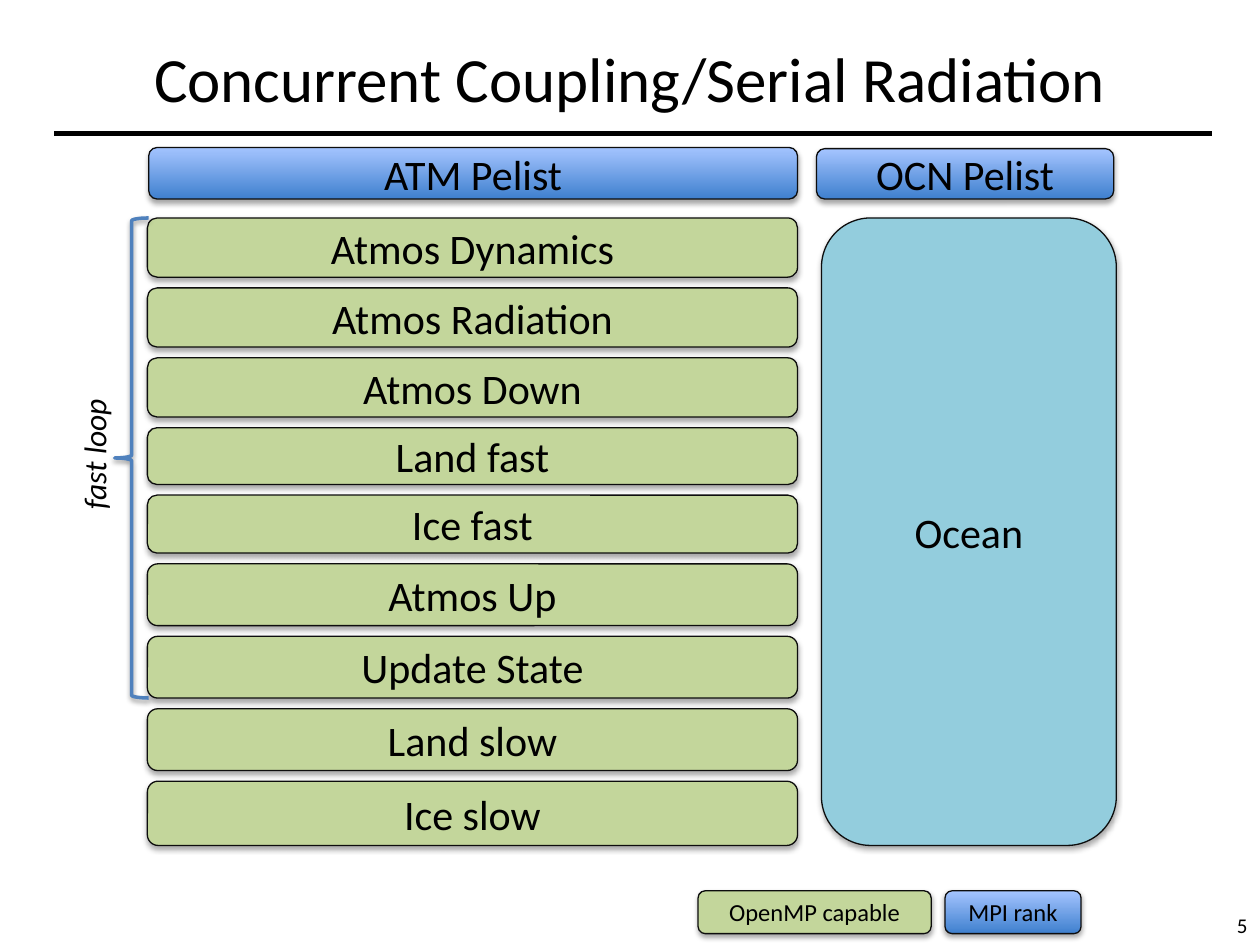
from lxml import etree
from pptx import Presentation
from pptx.dml.color import RGBColor
from pptx.enum.shapes import MSO_CONNECTOR, MSO_SHAPE
from pptx.enum.text import MSO_ANCHOR, MSO_AUTO_SIZE, PP_ALIGN
from pptx.oxml.ns import qn
from pptx.util import Inches, Pt

BLACK = RGBColor(0x00, 0x00, 0x00)
OUTLINE = RGBColor(0x0D, 0x0D, 0x0D)
GREEN = RGBColor(0xC3, 0xD6, 0x9B)
TEAL = RGBColor(0x93, 0xCD, 0xDD)
DARK_BLUE = RGBColor(0x3F, 0x80, 0xCE)
LIGHT_BLUE = RGBColor(0xA4, 0xC4, 0xFF)
BRACE_BLUE = RGBColor(0x4F, 0x81, 0xBD)


def add_text(sp, text, size, align, italic=None):
    p = sp.text_frame.paragraphs[0]
    p.alignment = align
    r = p.add_run()
    r.text = text
    r.font.name = "Calibri"
    r.font.size = Pt(size)
    r.font.italic = italic
    r.font.color.rgb = BLACK


def add_shape(kind, left, top, width, height, line, weight, opacity, distance):
    sp = s.shapes.add_shape(kind, Inches(left), Inches(top), Inches(width), Inches(height))
    sp.line.color.rgb = line
    sp.line.width = Pt(weight)
    sp.shadow.inherit = False
    effects = sp._element.spPr.find(qn("a:effectLst"))
    shadow = etree.SubElement(effects, qn("a:outerShdw"), blurRad=str(Pt(3.1)),
                              dist=str(Pt(distance)), dir="5400000", rotWithShape="0")
    color = etree.SubElement(shadow, qn("a:srgbClr"), val="000000")
    etree.SubElement(color, qn("a:alpha"), val=str(opacity * 1000))
    return sp


prs = Presentation()
prs.slide_width = Inches(10)
prs.slide_height = Inches(7.5)
s = prs.slides.add_slide(prs.slide_layouts[5])

title = s.shapes.title
title.left, title.top = Inches(0.5), Inches(0.26)
title.width, title.height = Inches(9), Inches(0.7)
title.text_frame.vertical_anchor = MSO_ANCHOR.MIDDLE
add_text(title, "Concurrent Coupling/Serial Radiation", 36, PP_ALIGN.CENTER)

rule = s.shapes.add_connector(MSO_CONNECTOR.STRAIGHT, Inches(0.43), Inches(1.06),
                              Inches(9.62), Inches(1.06))
rule.line.color.rgb = BLACK
rule.line.width = Pt(3)
etree.SubElement(rule._element.spPr, qn("a:effectLst"))

boxes = [
    ("ATM Pelist", 1.18, 1.17, 5.15, 0.41, None, 24),
    ("OCN Pelist", 6.48, 1.18, 2.36, 0.4, None, 24),
    ("Ocean", 6.52, 1.73, 2.34, 4.98, TEAL, 24),
    ("OpenMP capable", 5.54, 7.07, 1.85, 0.34, GREEN, 14),
    ("MPI rank", 7.5, 7.07, 1.08, 0.34, None, 14),
]

steps = [
    ("Atmos Dynamics", 0.47), ("Atmos Radiation", 0.47), ("Atmos Down", 0.47),
    ("Land fast", 0.45), ("Ice fast", 0.46), ("Atmos Up", 0.49),
    ("Update State", 0.49), ("Land slow", 0.49), ("Ice slow", 0.51),
]
top, bottom = 1.73, 6.71
gap = (bottom - top - sum(height for _, height in steps)) / (len(steps) - 1)
for name, height in steps:
    boxes.append((name, 1.17, top, 5.16, height, GREEN, 24))
    top += height + gap

for text, left, top, width, height, color, size in boxes:
    sp = add_shape(MSO_SHAPE.FLOWCHART_ALTERNATE_PROCESS, left, top, width, height,
                   OUTLINE, 0.75, 35, 1.8)
    if color is None:
        sp.fill.gradient()
        sp.fill.gradient_angle = 90
        for stop, shade in zip(sp.fill.gradient_stops, (DARK_BLUE, LIGHT_BLUE)):
            stop.color.rgb = shade
        sp.fill.gradient_stops[0].position = 0
        sp.fill.gradient_stops[1].position = 1
    else:
        sp.fill.solid()
        sp.fill.fore_color.rgb = color
    sp.text_frame.word_wrap = True
    sp.text_frame.vertical_anchor = MSO_ANCHOR.MIDDLE
    add_text(sp, text, size, PP_ALIGN.CENTER)

brace = add_shape(MSO_SHAPE.LEFT_BRACE, 0.91, 1.73, 0.27, 3.81, BRACE_BLUE, 2, 38, 1.6)
brace.fill.background()

label = s.shapes.add_textbox(Inches(0.16), Inches(3.36), Inches(1.17), Inches(0.4))
label.rotation = 270
label.text_frame.word_wrap = False
label.text_frame.auto_size = MSO_AUTO_SIZE.SHAPE_TO_FIT_TEXT
add_text(label, "fast loop", 18, PP_ALIGN.LEFT, True)

number = s.shapes.add_textbox(Inches(7.67), Inches(7.19), Inches(2.33), Inches(0.31))
number.text_frame.word_wrap = True
add_text(number, "5", 12, PP_ALIGN.RIGHT)

prs.save("out.pptx")
